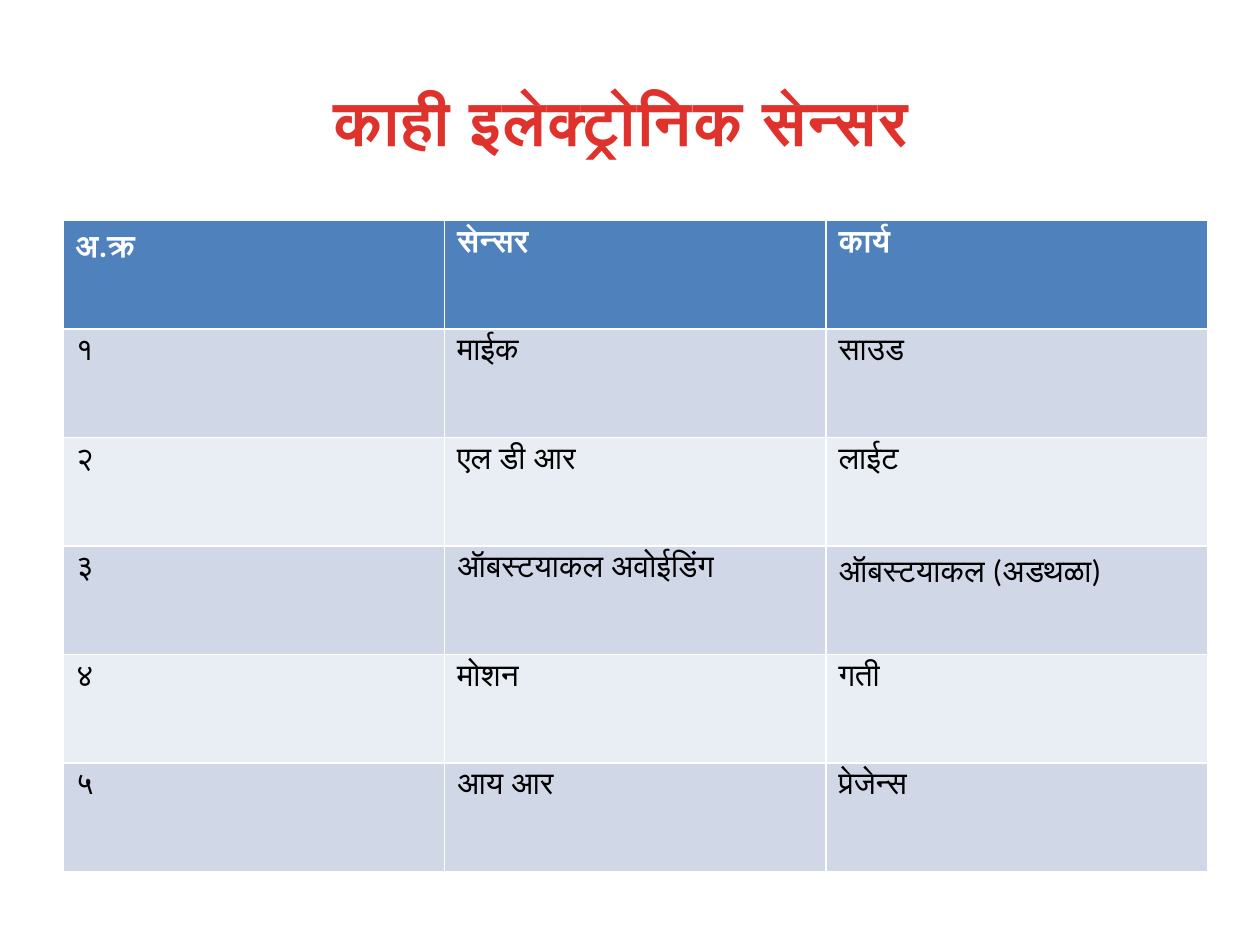
from dataclasses import dataclass

from pptx import Presentation
from pptx.dml.color import RGBColor
from pptx.enum.text import MSO_ANCHOR, PP_ALIGN
from pptx.util import Cm, Pt


@dataclass(frozen=True)
class Theme:
    title_color: RGBColor = RGBColor(0xE0, 0x32, 0x2D)
    header_fill: RGBColor = RGBColor(0x4F, 0x81, 0xBD)
    header_text: RGBColor = RGBColor(0xFF, 0xFF, 0xFF)
    body_text: RGBColor = RGBColor(0x00, 0x00, 0x00)
    odd_fill: RGBColor = RGBColor(0xD0, 0xD8, 0xE8)
    even_fill: RGBColor = RGBColor(0xE9, 0xED, 0xF4)
    title_font: str = "Montserrat"
    table_font: str = "Calibri"
    title_size: Pt = Pt(36)
    table_size: Pt = Pt(18)


theme = Theme()

ROWS = [
    ("अ.क्र", "सेन्सर", "कार्य"),
    ("१", "माईक", "साउड"),
    ("२", "एल डी आर", "लाईट"),
    ("३", "ऑबस्टयाकल अवोईडिंग", "ऑबस्टयाकल (अडथळा)"),
    ("४", "मोशन", "गती"),
    ("५", "आय आर", "प्रेजेन्स"),
]

prs = Presentation()
prs.slide_width, prs.slide_height = Cm(25.4), Cm(19.05)
s = prs.slides.add_slide(prs.slide_layouts[5])

# Title
title = s.shapes.title
title.left, title.top, title.width, title.height = Cm(1.27), Cm(0.83), Cm(22.86), Cm(3.18)
tf = title.text_frame
tf.vertical_anchor = MSO_ANCHOR.MIDDLE
p = tf.paragraphs[0]
p.alignment = PP_ALIGN.CENTER
r = p.add_run()
r.text = "काही इलेक्ट्रोनिक सेन्सर "
r.font.name = theme.title_font
r.font.size = theme.title_size
r.font.bold = True
r.font.color.rgb = theme.title_color
r.font._element.set("spc", "50")  # letter spacing, hundredths of a point

# Sensor table; its built-in style supplies the white borders
table = s.shapes.add_table(
    len(ROWS), len(ROWS[0]), Cm(1.27), Cm(4.45), Cm(23.07), Cm(13.12)
).table
for i, row in enumerate(ROWS):
    is_header = i == 0
    if is_header:
        fill = theme.header_fill
    else:
        fill = theme.odd_fill if i % 2 else theme.even_fill
    for j, text in enumerate(row):
        cell = table.cell(i, j)
        cell.text = text
        cell.fill.solid()
        cell.fill.fore_color.rgb = fill
        font = cell.text_frame.paragraphs[0].font
        font.name = theme.table_font
        font.size = theme.table_size
        font.bold = is_header
        font.color.rgb = theme.header_text if is_header else theme.body_text

prs.save("out.pptx")
